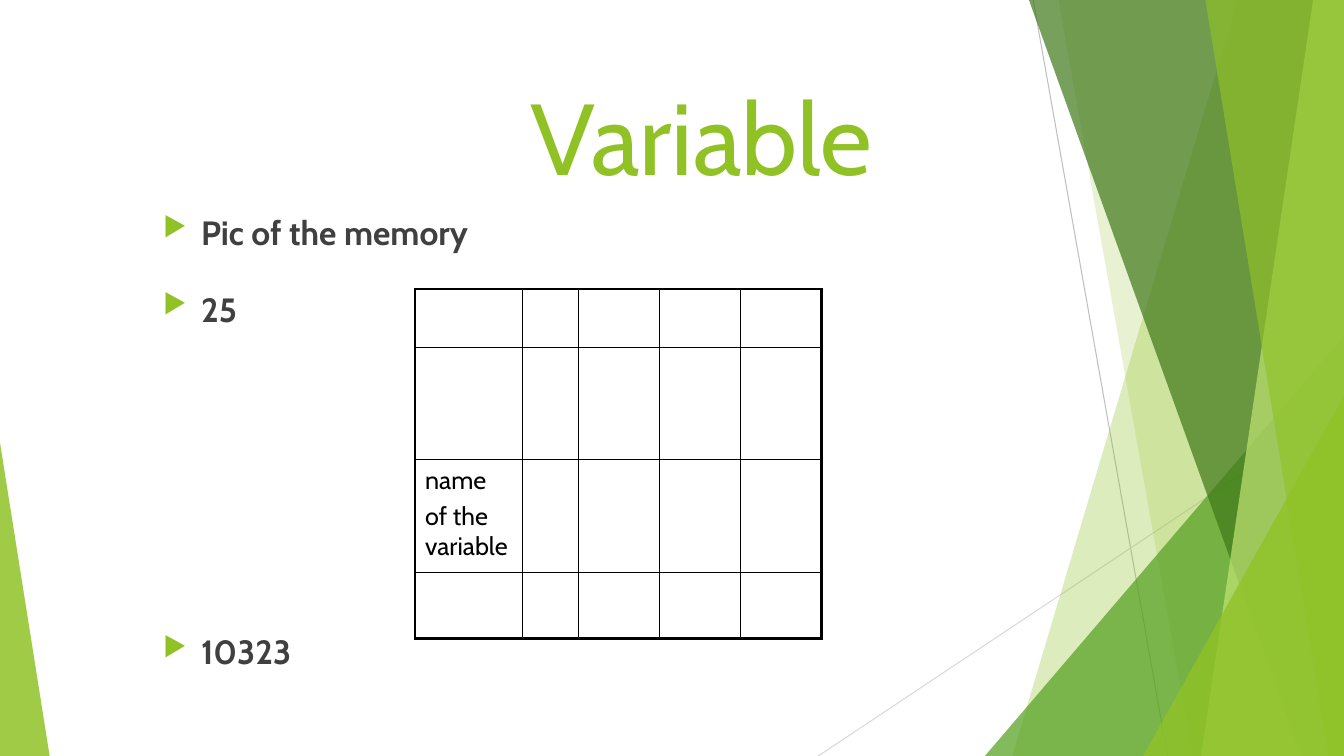
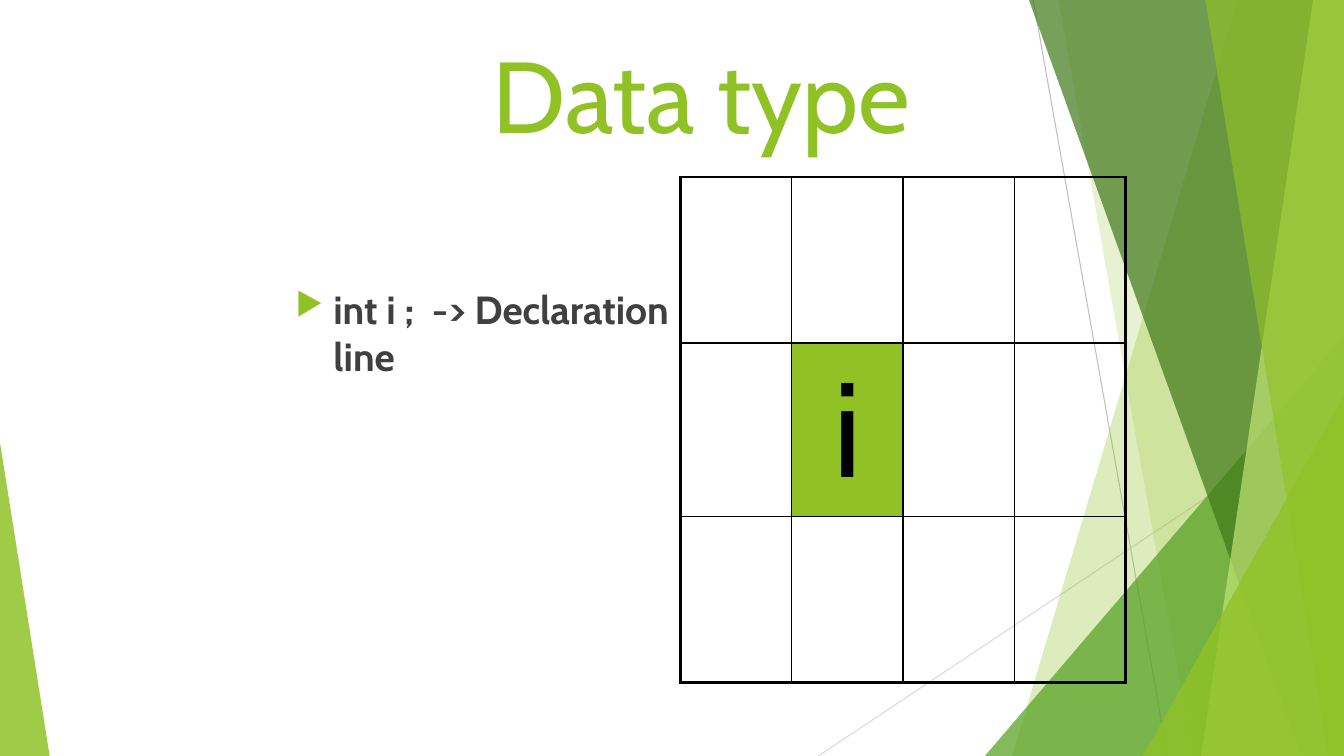
from dataclasses import dataclass

from lxml.etree import SubElement
from pptx import Presentation
from pptx.dml.color import RGBColor
from pptx.enum.shapes import MSO_CONNECTOR, MSO_SHAPE
from pptx.enum.text import MSO_ANCHOR, PP_ALIGN
from pptx.oxml.ns import qn
from pptx.util import Pt


@dataclass(frozen=True)
class Theme:
    font: str = "Cabin"
    green: str = "90C226"
    mid_green: str = "54A021"
    dark_green: str = "3F7819"
    pale_green: str = "C0E474"
    line_grey: str = "BFBFBF"
    pale_grey: str = "D9D9D9"
    body: str = "404040"
    black: str = "000000"
    title_size: float = 72
    bullet_size: float = 24
    code_size: float = 28
    cell_size: float = 18
    letter_size: float = 96
    outer_border: float = 2.25
    inner_border: float = 1
    hairline: float = 0.75


@dataclass(frozen=True)
class Box:
    left: float
    top: float
    width: float
    height: float

    @property
    def right(self):
        return self.left + self.width

    @property
    def bottom(self):
        return self.top + self.height

    @property
    def lengths(self):
        return [Pt(value) for value in (self.left, self.top, self.width, self.height)]


THEME = Theme()
PAGE = Box(0, 0, 960, 540)


def apply(target, values):
    for name, value in values.items():
        setattr(target, name, value)


def paint(shape, color, opacity):
    """Give a shape a flat, partly transparent fill; opacity is in percent."""
    shape.shadow.inherit = False
    shape.line.fill.background()
    shape.fill.solid()
    shape.fill.fore_color.rgb = RGBColor.from_string(color)
    color_element = shape.element.spPr.find(qn("a:solidFill"))[0]
    SubElement(color_element, qn("a:alpha"), val=str(opacity * 1000))


def add_run(paragraph, text, size, color, bold=False):
    run = paragraph.add_run()
    run.text = text
    apply(run.font, {"name": THEME.font, "size": Pt(size), "bold": bold})
    run.font.color.rgb = RGBColor.from_string(color)


def add_hairline(slide, start, end, color):
    points = [Pt(value) for value in (*start, *end)]
    connector = slide.shapes.add_connector(MSO_CONNECTOR.STRAIGHT, *points)
    connector.line.width = Pt(THEME.hairline)
    connector.line.color.rgb = RGBColor.from_string(color)
    SubElement(connector.element.spPr, qn("a:effectLst"))


def add_band(slide, box, top_inset, bottom_inset, color, opacity):
    """Fill from a slanted edge, set by its insets from the right, to the box's right side."""
    corners = [
        (box.right - top_inset, box.top),
        (box.right, box.top),
        (box.right, box.bottom),
        (box.right - bottom_inset, box.bottom),
    ]
    points = [(Pt(x), Pt(y)) for x, y in corners]
    builder = slide.shapes.build_freeform(*points[0])
    builder.add_line_segments(points[1:], close=True)
    paint(builder.convert_to_shape(), color, opacity)


def add_corner(slide, box, width, height, apex, color, opacity):
    """Add a right triangle in a bottom corner; apex is 0 for left, 1 for right."""
    left = box.left + apex * (box.width - width)
    corner = Box(left, box.bottom - height, width, height)
    shape = slide.shapes.add_shape(MSO_SHAPE.ISOSCELES_TRIANGLE, *corner.lengths)
    shape.adjustments[0] = apex
    paint(shape, color, opacity)


def add_backdrop(slide, box):
    add_hairline(
        slide, (box.right - 222, box.top), (box.right - 126, box.bottom), THEME.line_grey
    )
    add_hairline(
        slide, (box.right, box.bottom - 250), (box.right - 375.5, box.bottom), THEME.pale_grey
    )
    add_band(slide, box, 76, 237, THEME.green, 30)
    add_band(slide, box, 204, 108, THEME.green, 20)
    add_corner(slide, box, 256.5, 300, 1, THEME.mid_green, 72)
    add_band(slide, box, 225, 30.5, THEME.dark_green, 70)
    add_band(slide, box, 22, 102, THEME.pale_green, 70)
    add_band(slide, box, 99, 11, THEME.green, 65)
    add_corner(slide, box, 143.5, 257, 1, THEME.green, 80)
    add_corner(slide, box, 35.5, 224, 0, THEME.green, 85)


def add_text_frame(slide, box):
    text_frame = slide.shapes.add_textbox(*box.lengths).text_frame
    apply(text_frame, {"word_wrap": True, "vertical_anchor": MSO_ANCHOR.TOP})
    return text_frame


def add_title(slide, box, text):
    paragraph = add_text_frame(slide, box).paragraphs[0]
    paragraph.alignment = PP_ALIGN.CENTER
    add_run(paragraph, text, THEME.title_size, THEME.green)


def add_arrow_bullet(paragraph):
    properties = paragraph._p.get_or_add_pPr()
    properties.set("marL", str(Pt(27)))
    properties.set("indent", str(Pt(-27)))
    color = SubElement(properties, qn("a:buClr"))
    SubElement(color, qn("a:srgbClr"), val=THEME.green)
    SubElement(properties, qn("a:buSzPct"), val="80000")
    SubElement(properties, qn("a:buChar"), char="▶")


def add_bullets(slide, box, items, size, line_spacing=1.0):
    """Add bulleted lines from (text, space before) pairs."""
    text_frame = add_text_frame(slide, box)
    for index, (text, space_before) in enumerate(items):
        paragraph = text_frame.add_paragraph() if index else text_frame.paragraphs[0]
        apply(paragraph, {"line_spacing": line_spacing, "space_before": Pt(space_before)})
        add_arrow_bullet(paragraph)
        add_run(paragraph, text, size, THEME.body, bold=True)


def set_borders(cell, widths):
    properties = cell._tc.get_or_add_tcPr()
    for index, (side, width) in enumerate(widths.items()):
        line = SubElement(properties, qn(f"a:ln{side}"), w=str(Pt(width)))
        fill = SubElement(line, qn("a:solidFill"))
        SubElement(fill, qn("a:srgbClr"), val=THEME.black)
        properties.insert(index, line)


def add_memory_grid(slide, left, top, columns, rows):
    """Add an empty ruled table with a heavy outer frame and return it."""
    box = Box(left, top, sum(columns), sum(rows))
    table = slide.shapes.add_table(len(rows), len(columns), *box.lengths).table
    apply(table, {"first_row": False, "horz_banding": False})
    for column, width in zip(table.columns, columns):
        column.width = Pt(width)
    for row, height in zip(table.rows, rows):
        row.height = Pt(height)
    for row_index in range(len(rows)):
        for column_index in range(len(columns)):
            cell = table.cell(row_index, column_index)
            cell.fill.background()
            on_frame = {
                "L": column_index == 0,
                "R": column_index == len(columns) - 1,
                "T": row_index == 0,
                "B": row_index == len(rows) - 1,
            }
            set_borders(cell, {
                side: THEME.outer_border if outer else THEME.inner_border
                for side, outer in on_frame.items()
            })
    return table


def fill_cell(cell, lines, size, alignment=PP_ALIGN.LEFT):
    text_frame = cell.text_frame
    for index, text in enumerate(lines):
        paragraph = text_frame.add_paragraph() if index else text_frame.paragraphs[0]
        paragraph.alignment = alignment
        if index:
            paragraph.space_before = Pt(size * 0.2)
        add_run(paragraph, text, size, THEME.black)


def add_slide(presentation, title, title_top):
    slide = presentation.slides.add_slide(presentation.slide_layouts[6])
    add_backdrop(slide, PAGE)
    add_title(slide, Box(204, title_top, 594, 113), title)
    return slide


def add_variable_slide(presentation):
    slide = add_slide(presentation, "Variable", 50)
    items = [("Pic of the memory", 0), ("25", 37.5), ("10323", 227.5)]
    add_bullets(slide, Box(109.5, 158, 386, 324), items, THEME.bullet_size, 0.6)
    table = add_memory_grid(
        slide, 296.5, 206.5, [76.5, 40, 58, 58, 58], [41.5, 80.5, 80.5, 47]
    )
    fill_cell(table.cell(2, 0), ["name", "of the variable"], THEME.cell_size)


def add_data_type_slide(presentation):
    slide = add_slide(presentation, "Data type", 20)
    items = [("int i ;  -> Declaration line", 0)]
    add_bullets(slide, Box(204, 200, 291.5, 280), items, THEME.code_size)
    table = add_memory_grid(slide, 486, 126.5, [79.5] * 4, [118.5, 124, 118.5])
    variable_cell = table.cell(1, 1)
    variable_cell.fill.solid()
    variable_cell.fill.fore_color.rgb = RGBColor.from_string(THEME.green)
    fill_cell(variable_cell, ["i"], THEME.letter_size, PP_ALIGN.CENTER)


def main():
    presentation = Presentation()
    apply(presentation, {"slide_width": Pt(PAGE.width), "slide_height": Pt(PAGE.height)})
    add_variable_slide(presentation)
    add_data_type_slide(presentation)
    presentation.save("out.pptx")


if __name__ == "__main__":
    main()
